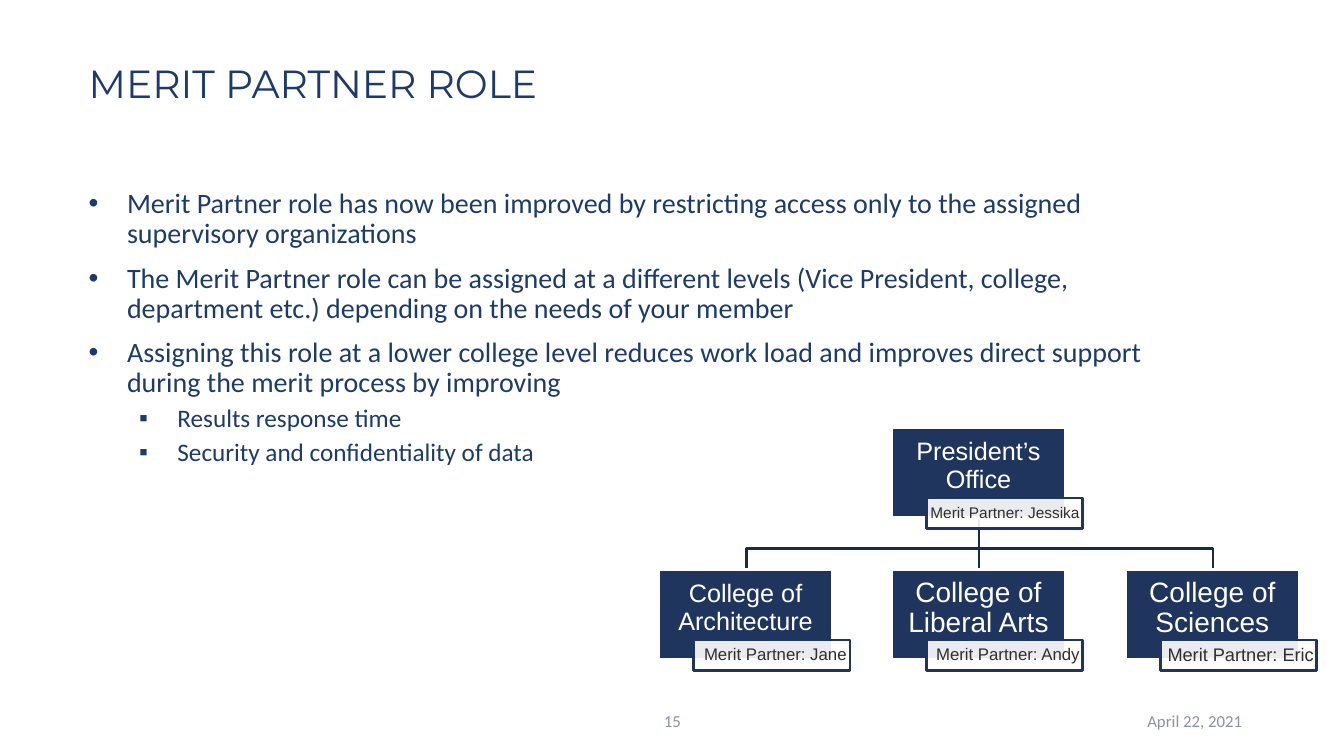
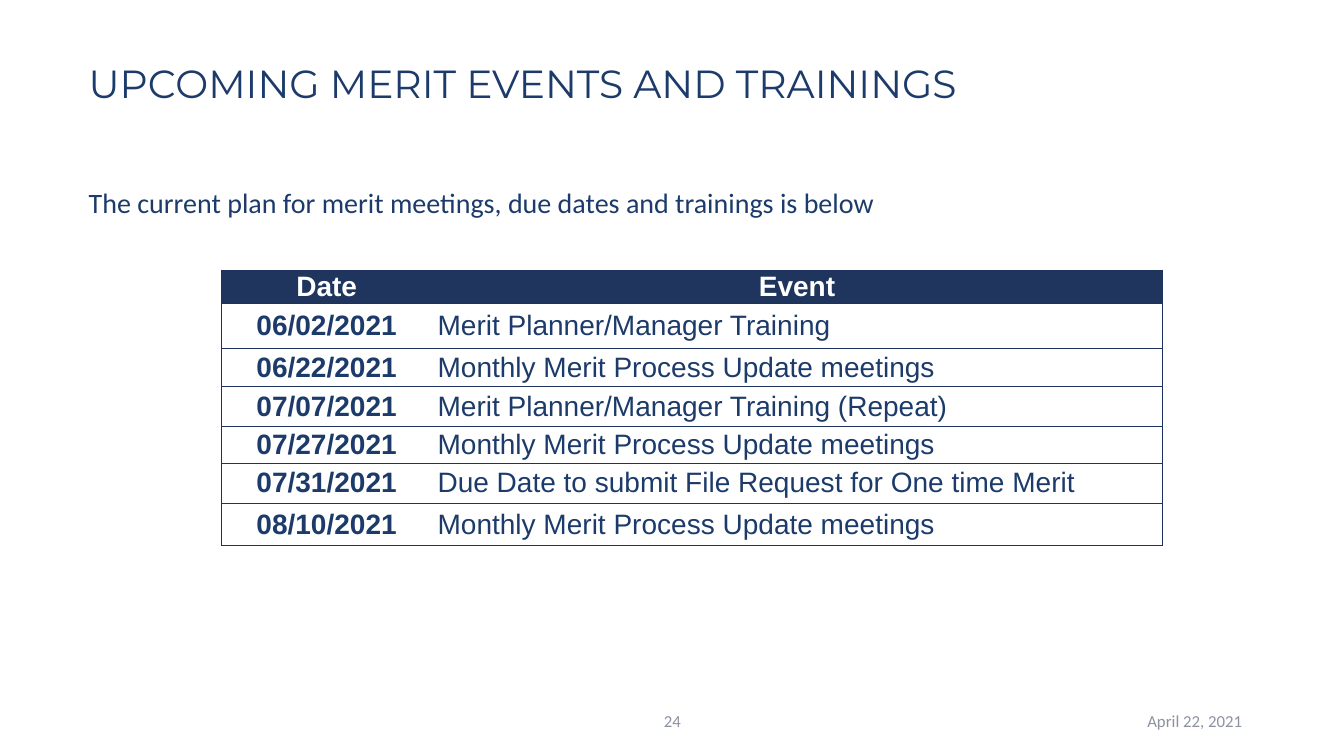
"""Build two slides on the merit partner role and the coming merit events."""
from dataclasses import dataclass
from typing import Any

from lxml.etree import SubElement
from pptx import Presentation
from pptx.dml.color import RGBColor
from pptx.enum.shapes import MSO_CONNECTOR, MSO_SHAPE
from pptx.enum.text import MSO_ANCHOR, MSO_AUTO_SIZE, PP_ALIGN
from pptx.oxml.ns import qn
from pptx.util import Pt

PIXEL = 9144
INK = RGBColor(0x1C, 0x3B, 0x6A)
NAVY = RGBColor(0x1F, 0x35, 0x5E)
CONNECTOR = RGBColor(0x19, 0x2A, 0x4B)
BORDER = RGBColor(0x1D, 0x33, 0x5D)
TAG_INK = RGBColor(0x33, 0x2C, 0x2C)
FOOTER_INK = RGBColor(0x8D, 0x92, 0xA1)
WHITE = RGBColor(0xFF, 0xFF, 0xFF)


@dataclass(frozen=True)
class Box:
    """A rectangle in pixels."""
    left: int
    top: int
    width: int
    height: int

    def emu(self) -> list[int]:
        """Return left, top, width and height in EMU."""
        return [value * PIXEL for value in (self.left, self.top, self.width, self.height)]


@dataclass(frozen=True)
class TextStyle:
    """The look of a run and its paragraph."""
    font: str
    size: int
    color: RGBColor
    align: PP_ALIGN = PP_ALIGN.LEFT
    bold: bool = False
    line_spacing: float = 0.9


@dataclass(frozen=True)
class ListItem:
    """A body paragraph with its bullet, indents and gap above."""
    text: str
    size: int = 20
    level: int = 0
    bullet: str = ""
    margin: int = 0
    space_before: int = 10


@dataclass(frozen=True)
class Office:
    """An organization chart box with its merit partner tag."""
    name: str
    name_size: int
    partner: str
    partner_size: int
    left: int
    top: int


@dataclass(frozen=True)
class Event:
    """A table row."""
    date: str
    name: str
    height: int


TITLE_BOX = Box(88, 68, 1154, 43)
BODY_BOX = Box(88, 183, 1117, 468)
DATE_BOX = Box(942, 695, 300, 40)
NUMBER_BOX = Box(517, 695, 300, 40)
TITLE_STYLE = TextStyle("Montserrat", 28, INK)
DATE_STYLE = TextStyle("Calibri", 12, FOOTER_INK, PP_ALIGN.RIGHT, line_spacing=1.0)
NUMBER_STYLE = TextStyle("Calibri", 12, FOOTER_INK, PP_ALIGN.CENTER, line_spacing=1.0)

HANGING = 38
ROLE_ITEMS = [
    *(ListItem(text, bullet="•", margin=HANGING) for text in (
        "Merit Partner role has now been improved by restricting access only to the "
        "assigned supervisory organizations",
        "The Merit Partner role can be assigned at a different levels (Vice President, "
        "college, department etc.) depending on the needs of your member",
        "Assigning this role at a lower college level reduces work load and improves "
        "direct support during the merit process by improving",
    )),
    *(ListItem(text, 18, 1, "▪", 88, 5) for text in (
        "Results response time", "Security and confidentiality of data",
    )),
]
EVENT_ITEMS = [ListItem("The current plan for merit meetings, due dates and trainings is below")]

OFFICE_WIDTH, OFFICE_HEIGHT = 173, 89
OFFICE_LEFTS = [653 + column * 463 // 2 for column in range(3)]
OFFICE_TOP, COLLEGE_TOP, BRANCH_TOP = 424, 565, 544
PRESIDENT = Office("President’s Office", 18, "Jessika", 11, OFFICE_LEFTS[1], OFFICE_TOP)
COLLEGES = [
    Office(*details, left, COLLEGE_TOP) for details, left in zip((
        ("College of Architecture", 18, "Jane", 12),
        ("College of Liberal Arts", 20, "Andy", 12),
        ("College of Sciences", 20, "Eric", 13),
    ), OFFICE_LEFTS)
]

EVENTS = [
    Event("Date", "Event", 32),
    Event("06/02/2021", "Merit Planner/Manager Training", 44),
    Event("06/22/2021", "Monthly Merit Process Update meetings", 38),
    Event("07/07/2021", "Merit Planner/Manager Training (Repeat)", 40),
    Event("07/27/2021", "Monthly Merit Process Update meetings", 36),
    Event("07/31/2021", "Due Date to submit File Request for One time Merit", 40),
    Event("08/10/2021", "Monthly Merit Process Update meetings", 42),
]
COLUMN_WIDTHS = (208, 725)


def set_format(target: Any, values: dict[str, Any]) -> None:
    """Set each named attribute of the target."""
    for name, value in values.items():
        setattr(target, name, value)


def set_frame(target: Any, anchor: MSO_ANCHOR, insets: tuple[int, int, int, int]) -> None:
    """Set anchor and left, top, right and bottom insets of a frame or cell."""
    sides = ("margin_left", "margin_top", "margin_right", "margin_bottom")
    set_format(target, {"vertical_anchor": anchor,
                        **{side: inset * PIXEL for side, inset in zip(sides, insets)}})


def write(paragraph: Any, text: str, style: TextStyle, space_before: int = 0) -> None:
    """Write one formatted run into a paragraph."""
    set_format(paragraph, {"alignment": style.align, "line_spacing": style.line_spacing,
                           "space_before": Pt(space_before)})
    run = paragraph.add_run()
    run.text = text
    set_format(run.font, {"name": style.font, "size": Pt(style.size), "bold": style.bold})
    run.font.color.rgb = style.color


def place(placeholder: Any, box: Box, anchor: MSO_ANCHOR) -> Any:
    """Move a placeholder and return its prepared text frame."""
    set_format(placeholder, dict(zip(("left", "top", "width", "height"), box.emu())))
    frame = placeholder.text_frame
    set_format(frame, {"word_wrap": True, "auto_size": MSO_AUTO_SIZE.NONE})
    set_frame(frame, anchor, (0, 5, 10 if anchor == MSO_ANCHOR.TOP else 0, 5))
    return frame


def set_bullet(paragraph: Any, item: ListItem) -> None:
    """Give a paragraph its indents and bullet."""
    properties = paragraph._p.get_or_add_pPr()
    properties.set("marL", str(item.margin * PIXEL))
    properties.set("indent", str(-HANGING * PIXEL if item.bullet else 0))
    if item.bullet:
        SubElement(properties, qn("a:buFont")).set("typeface", "Arial")
        SubElement(properties, qn("a:buChar")).set("char", item.bullet)
    else:
        SubElement(properties, qn("a:buNone"))


def add_footer(slide: Any, box: Box, text: str, style: TextStyle) -> None:
    """Add one footer text."""
    frame = slide.shapes.add_textbox(*box.emu()).text_frame
    set_format(frame, {"word_wrap": True, "vertical_anchor": MSO_ANCHOR.MIDDLE})
    write(frame.paragraphs[0], text, style)


def add_slide(presentation: Any, title: str, items: list[ListItem], number: int) -> Any:
    """Add a slide with title, body list and footers."""
    slide = presentation.slides.add_slide(presentation.slide_layouts[1])
    title_frame = place(slide.shapes.title, TITLE_BOX, MSO_ANCHOR.BOTTOM)
    write(title_frame.paragraphs[0], title, TITLE_STYLE)
    body = place(slide.placeholders[1], BODY_BOX, MSO_ANCHOR.TOP)
    for index, item in enumerate(items):
        paragraph = body.add_paragraph() if index else body.paragraphs[0]
        paragraph.level = item.level
        set_bullet(paragraph, item)
        write(paragraph, item.text, TextStyle("Calibri", item.size, INK),
              item.space_before if index else 0)
    add_footer(slide, DATE_BOX, "April 22, 2021", DATE_STYLE)
    add_footer(slide, NUMBER_BOX, str(number), NUMBER_STYLE)
    return slide


def set_line(shape: Any, color: RGBColor) -> None:
    """Give a shape or connector a two point line."""
    shape.line.color.rgb = color
    shape.line.width = Pt(2)


def add_panel(slide: Any, box: Box, fill: RGBColor, line: RGBColor, text: str,
              style: TextStyle, insets: tuple[int, int, int, int]) -> Any:
    """Add a filled rectangle with text."""
    panel = slide.shapes.add_shape(MSO_SHAPE.RECTANGLE, *box.emu())
    panel.shadow.inherit = False
    panel.fill.solid()
    panel.fill.fore_color.rgb = fill
    set_line(panel, line)
    panel.text_frame.word_wrap = True
    set_frame(panel.text_frame, MSO_ANCHOR.MIDDLE, insets)
    write(panel.text_frame.paragraphs[0], text, style)
    return panel


def add_office(slide: Any, office: Office) -> None:
    """Add an office box and its translucent partner tag."""
    add_panel(slide, Box(office.left, office.top, OFFICE_WIDTH, OFFICE_HEIGHT), NAVY, WHITE,
              office.name, TextStyle("Arial", office.name_size, WHITE, PP_ALIGN.CENTER),
              (1, 1, 1, 13))
    tag = add_panel(slide, Box(office.left + 35, office.top + 70, 155, 30), WHITE, NAVY,
                    f"Merit Partner: {office.partner}",
                    TextStyle("Arial", office.partner_size, TAG_INK, PP_ALIGN.RIGHT),
                    (1, 1, 3, 1))
    color = tag._element.spPr.find(qn("a:solidFill")).find(qn("a:srgbClr"))
    SubElement(color, qn("a:alpha")).set("val", "90000")


def add_branch(slide: Any, college: Office) -> None:
    """Link the president's box to a college."""
    start, end = (office.left + OFFICE_WIDTH // 2 + 1 for office in (PRESIDENT, college))
    top = OFFICE_TOP + OFFICE_HEIGHT
    if start == end:
        branch = slide.shapes.add_connector(
            MSO_CONNECTOR.STRAIGHT,
            *(value * PIXEL for value in (start, top, end, COLLEGE_TOP)))
        SubElement(branch._element.spPr, qn("a:effectLst"))
    else:
        builder = slide.shapes.build_freeform(start, top, scale=PIXEL)
        builder.add_line_segments(
            [(start, BRANCH_TOP), (end, BRANCH_TOP), (end, COLLEGE_TOP)], close=False)
        branch = builder.convert_to_shape()
        branch.fill.background()
        branch.shadow.inherit = False
    set_line(branch, CONNECTOR)


def set_borders(cell: Any, visible: set[str]) -> None:
    """Draw the named cell sides and clear the others."""
    properties = cell._tc.get_or_add_tcPr()
    for side in ("lnL", "lnR", "lnT", "lnB"):
        line = SubElement(properties, qn(f"a:{side}"), w=str(Pt(0.75)))
        if side in visible:
            fill = SubElement(line, qn("a:solidFill"))
            SubElement(fill, qn("a:srgbClr")).set("val", str(BORDER))
        else:
            SubElement(line, qn("a:noFill"))


def add_events(slide: Any) -> None:
    """Add the table of events."""
    box = Box(220, 268, sum(COLUMN_WIDTHS), sum(event.height for event in EVENTS))
    table = slide.shapes.add_table(len(EVENTS), len(COLUMN_WIDTHS), *box.emu()).table
    set_format(table, {"first_row": False, "horz_banding": False})
    for column, width in zip(table.columns, COLUMN_WIDTHS):
        column.width = width * PIXEL
    for row_index, event in enumerate(EVENTS):
        header = row_index == 0
        table.rows[row_index].height = event.height * PIXEL
        for column_index, text in enumerate((event.date, event.name)):
            cell = table.cell(row_index, column_index)
            strong = header or column_index == 0
            set_frame(cell, MSO_ANCHOR.MIDDLE, (6, 0, 6, 0))
            set_borders(cell, {"lnT", "lnB", "lnR" if column_index else "lnL"})
            if header:
                cell.fill.solid()
                cell.fill.fore_color.rgb = NAVY
            else:
                cell.fill.background()
            write(cell.text_frame.paragraphs[0], text,
                  TextStyle("Arial", 20, WHITE if header else INK,
                            PP_ALIGN.CENTER if strong else PP_ALIGN.LEFT, strong, 1.0))


def main() -> None:
    """Build and save the presentation."""
    presentation = Presentation()
    set_format(presentation, {"slide_width": 1333 * PIXEL, "slide_height": 750 * PIXEL})
    role = add_slide(presentation, "MERIT PARTNER ROLE", ROLE_ITEMS, 15)
    for college in COLLEGES:
        add_branch(role, college)
    for office in (PRESIDENT, *COLLEGES):
        add_office(role, office)
    add_events(add_slide(presentation, "UPCOMING MERIT EVENTS AND TRAININGS", EVENT_ITEMS, 24))
    presentation.save("out.pptx")


if __name__ == "__main__":
    main()
